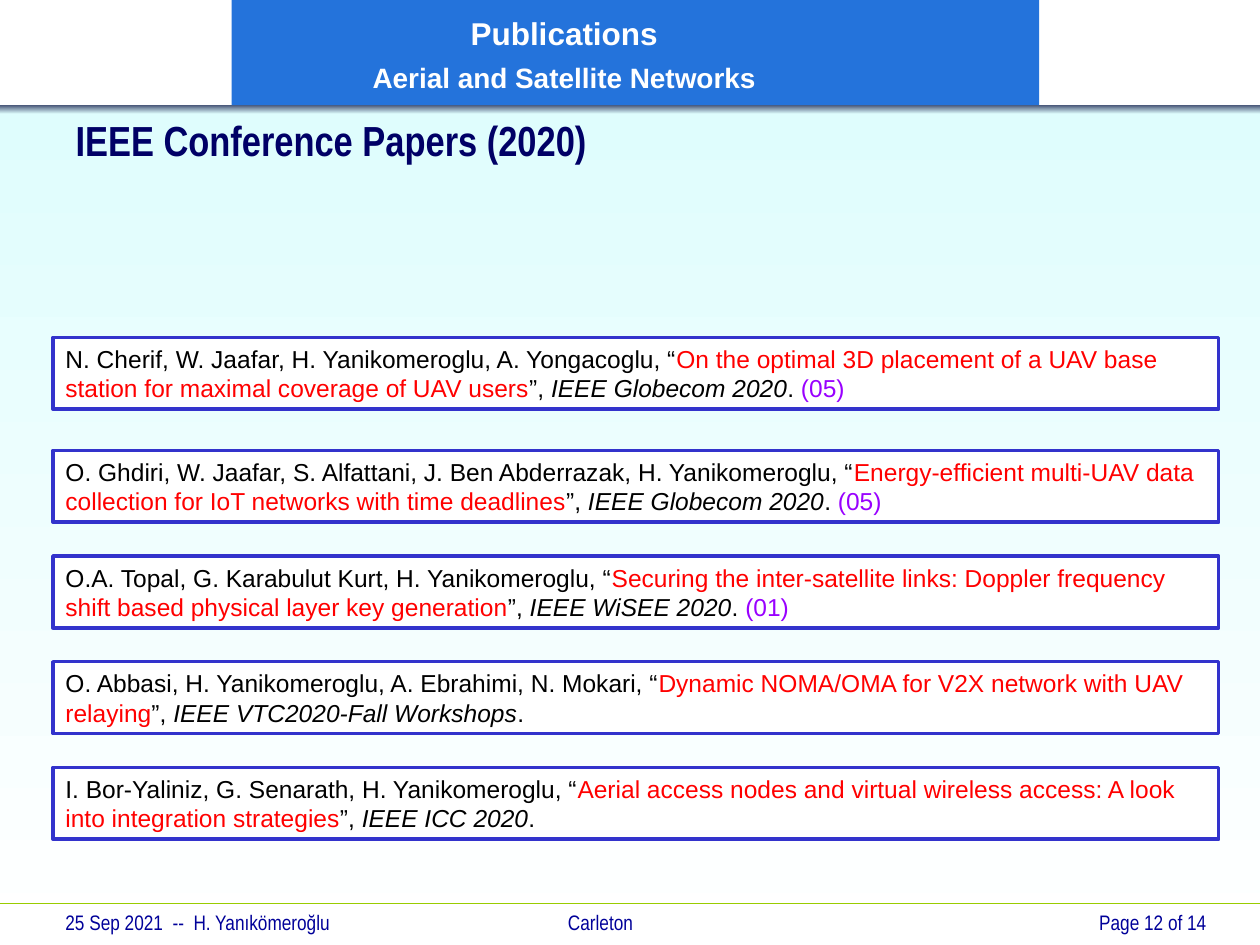
from lxml import etree
from pptx import Presentation
from pptx.dml.color import RGBColor
from pptx.enum.shapes import MSO_CONNECTOR, MSO_SHAPE
from pptx.enum.text import MSO_ANCHOR, MSO_AUTO_SIZE, PP_ALIGN
from pptx.oxml.ns import qn
from pptx.util import Cm, Pt

RECTANGLE = MSO_SHAPE.RECTANGLE
STRAIGHT = MSO_CONNECTOR.STRAIGHT
MIDDLE, TOP = MSO_ANCHOR.MIDDLE, MSO_ANCHOR.TOP
LEFT, CENTER, RIGHT = PP_ALIGN.LEFT, PP_ALIGN.CENTER, PP_ALIGN.RIGHT
NO_AUTO_SIZE = MSO_AUTO_SIZE.NONE

WHITE = RGBColor(0xFF, 0xFF, 0xFF)
BLACK = RGBColor(0x00, 0x00, 0x00)
PALE_CYAN = RGBColor(0xDF, 0xFD, 0xFD)
SLATE = RGBColor(0x47, 0x55, 0x77)
HEADER_BLUE = RGBColor(0x24, 0x73, 0xDB)
TITLE_NAVY = RGBColor(0x00, 0x00, 0x66)
FOOTER_BLUE = RGBColor(0x00, 0x00, 0x99)
FOOTER_GREEN = RGBColor(0x99, 0xCC, 0x00)
BORDER_BLUE = RGBColor(0x33, 0x33, 0xCC)
RED = RGBColor(0xFF, 0x00, 0x00)
PURPLE = RGBColor(0x99, 0x00, 0xFF)

SLIDE_WIDTH, SLIDE_HEIGHT = Cm(25.4), Cm(19.05)
HEADER_HEIGHT = Cm(2.12)
FOOTER_TOP = Cm(18.21)
MARGIN, CONTENT_WIDTH = Cm(1.07), Cm(23.5)

HEADER_FONT = {"name": "Arial", "bold": True}
TITLE_FONT = {"name": "Arial Narrow", "size": Pt(24), "bold": True}
FOOTER_FONT = {"name": "Arial Narrow", "size": Pt(12)}
PAPER_FONT = {"name": "Arial", "size": Pt(14)}

HEADER_LINES = [("Publications", 18), ("Aerial and Satellite Networks", 16)]
PAPER_TOPS = [Cm(6.8)] + [Cm(9.08 + 2.13 * row) for row in range(4)]
PAPERS = [
    ("N. Cherif, W. Jaafar, H. Yanikomeroglu, A. Yongacoglu",
     "On the optimal 3D placement of a UAV base station for maximal coverage of UAV users",
     "IEEE Globecom 2020", "(05)"),
    ("O. Ghdiri, W. Jaafar, S. Alfattani, J. Ben Abderrazak, H. Yanikomeroglu",
     "Energy-efficient multi-UAV data collection for IoT networks with time deadlines",
     "IEEE Globecom 2020", "(05)"),
    ("O.A. Topal, G. Karabulut Kurt, H. Yanikomeroglu",
     "Securing the inter-satellite links: Doppler frequency shift based physical layer key generation",
     "IEEE WiSEE 2020", "(01)"),
    ("O. Abbasi, H. Yanikomeroglu, A. Ebrahimi, N. Mokari",
     "Dynamic NOMA/OMA for V2X network with UAV relaying",
     "IEEE VTC2020-Fall Workshops", ""),
    ("I. Bor-Yaliniz, G. Senarath, H. Yanikomeroglu",
     "Aerial access nodes and virtual wireless access: A look into integration strategies",
     "IEEE ICC 2020", ""),
]


def set_attributes(target, values):
    """Set each named attribute of the target."""
    for name, value in values.items():
        setattr(target, name, value)


def add_run(paragraph, text, color, font_values):
    """Append one formatted run to a paragraph."""
    run = paragraph.add_run()
    run.text = text
    set_attributes(run.font, font_values)
    run.font.color.rgb = color


def add_rectangle(slide, box, color=None, gradient=None):
    """Add a borderless rectangle with a solid or top-to-bottom gradient fill."""
    shape = slide.shapes.add_shape(RECTANGLE, *box)
    shape.shadow.inherit = False
    shape.line.fill.background()
    if gradient:
        shape.fill.gradient()
        shape.fill.gradient_angle = 270
        for stop, stop_color in zip(shape.fill.gradient_stops, gradient):
            stop.color.rgb = stop_color
    else:
        shape.fill.solid()
        shape.fill.fore_color.rgb = color
    return shape


def add_header(slide, box):
    """Add the blue header band with its two centred lines."""
    shape = add_rectangle(slide, box, HEADER_BLUE)
    frame = shape.text_frame
    set_attributes(frame, {"word_wrap": True, "vertical_anchor": MIDDLE,
                           "margin_left": 0, "margin_right": Cm(2.87)})
    for index, (text, size) in enumerate(HEADER_LINES):
        paragraph = frame.add_paragraph() if index else frame.paragraphs[0]
        set_attributes(paragraph, {"alignment": CENTER, "line_spacing": 1.1})
        if index:
            paragraph.space_before = Pt(0.2 * size)
        add_run(paragraph, text, WHITE, {**HEADER_FONT, "size": Pt(size)})


def add_footer_text(slide, box, text, alignment, tab=None):
    """Add one footer text box, with an optional tab stop."""
    frame = slide.shapes.add_textbox(*box).text_frame
    set_attributes(frame, {"word_wrap": True, "vertical_anchor": TOP})
    paragraph = frame.paragraphs[0]
    paragraph.alignment = alignment
    if tab:
        properties = paragraph._p.get_or_add_pPr()
        tabs = etree.SubElement(properties, qn("a:tabLst"))
        etree.SubElement(tabs, qn("a:tab"), pos=str(int(tab)), algn="l")
    add_run(paragraph, text, FOOTER_BLUE, FOOTER_FONT)


def add_footer(slide, box):
    """Add the footer rule, author line and page number."""
    left, top, width, height = box
    rule = slide.shapes.add_connector(STRAIGHT, 0, top, SLIDE_WIDTH, top)
    rule.line.color.rgb = FOOTER_GREEN
    rule.line.width = Pt(0.75)
    etree.SubElement(rule.element.spPr, qn("a:effectLst"))
    page_width = Cm(5.5)
    add_footer_text(slide, (left, top, Cm(15.9), height),
                    "25 Sep 2021  --  H. Yanıkömeroğlu\tCarleton", LEFT, Cm(10.13))
    add_footer_text(slide, (left + width - page_width, top, page_width, height),
                    "Page 12 of 14", RIGHT)


def place_title(slide, box):
    """Place the title in its box, in front of the background."""
    title = slide.shapes.title
    set_attributes(title, dict(zip(("left", "top", "width", "height"), box)))
    title.element.getparent().append(title.element)
    frame = title.text_frame
    set_attributes(frame, {"word_wrap": True, "vertical_anchor": MIDDLE,
                           "auto_size": NO_AUTO_SIZE})
    paragraph = frame.paragraphs[0]
    paragraph.alignment = LEFT
    add_run(paragraph, "IEEE Conference Papers (2020)", TITLE_NAVY, TITLE_FONT)


def add_paper(slide, box, authors, name, venue, count):
    """Add one bordered citation."""
    shape = add_rectangle(slide, box, WHITE)
    shape.line.color.rgb = BORDER_BLUE
    shape.line.width = Pt(2)
    frame = shape.text_frame
    set_attributes(frame, {"word_wrap": True, "vertical_anchor": MIDDLE})
    paragraph = frame.paragraphs[0]
    paragraph.alignment = LEFT
    add_run(paragraph, f"{authors}, “", BLACK, PAPER_FONT)
    add_run(paragraph, name, RED, PAPER_FONT)
    add_run(paragraph, "”, ", BLACK, PAPER_FONT)
    add_run(paragraph, venue, BLACK, {**PAPER_FONT, "italic": True})
    add_run(paragraph, ". " if count else ".", BLACK, PAPER_FONT)
    if count:
        add_run(paragraph, count, PURPLE, PAPER_FONT)


def main():
    """Build and save the publications slide."""
    presentation = Presentation()
    set_attributes(presentation, {"slide_width": SLIDE_WIDTH, "slide_height": SLIDE_HEIGHT})
    slide = presentation.slides.add_slide(presentation.slide_layouts.get_by_name("Title Only"))
    panel_top = Cm(2.18)
    add_rectangle(slide, (0, panel_top, SLIDE_WIDTH, SLIDE_HEIGHT - panel_top),
                  gradient=(PALE_CYAN, WHITE))
    add_footer(slide, (MARGIN, FOOTER_TOP, CONTENT_WIDTH, SLIDE_HEIGHT - FOOTER_TOP))
    add_rectangle(slide, (0, HEADER_HEIGHT, SLIDE_WIDTH, Cm(0.18)),
                  gradient=(SLATE, PALE_CYAN))
    add_header(slide, (Cm(4.67), 0, Cm(16.28), HEADER_HEIGHT))
    place_title(slide, (Cm(1.27), Cm(2.29), Cm(21.8), Cm(1.07)))
    for top, paper in zip(PAPER_TOPS, PAPERS):
        add_paper(slide, (MARGIN, top, CONTENT_WIDTH, Cm(1.45)), *paper)
    presentation.save("out.pptx")


if __name__ == "__main__":
    main()
